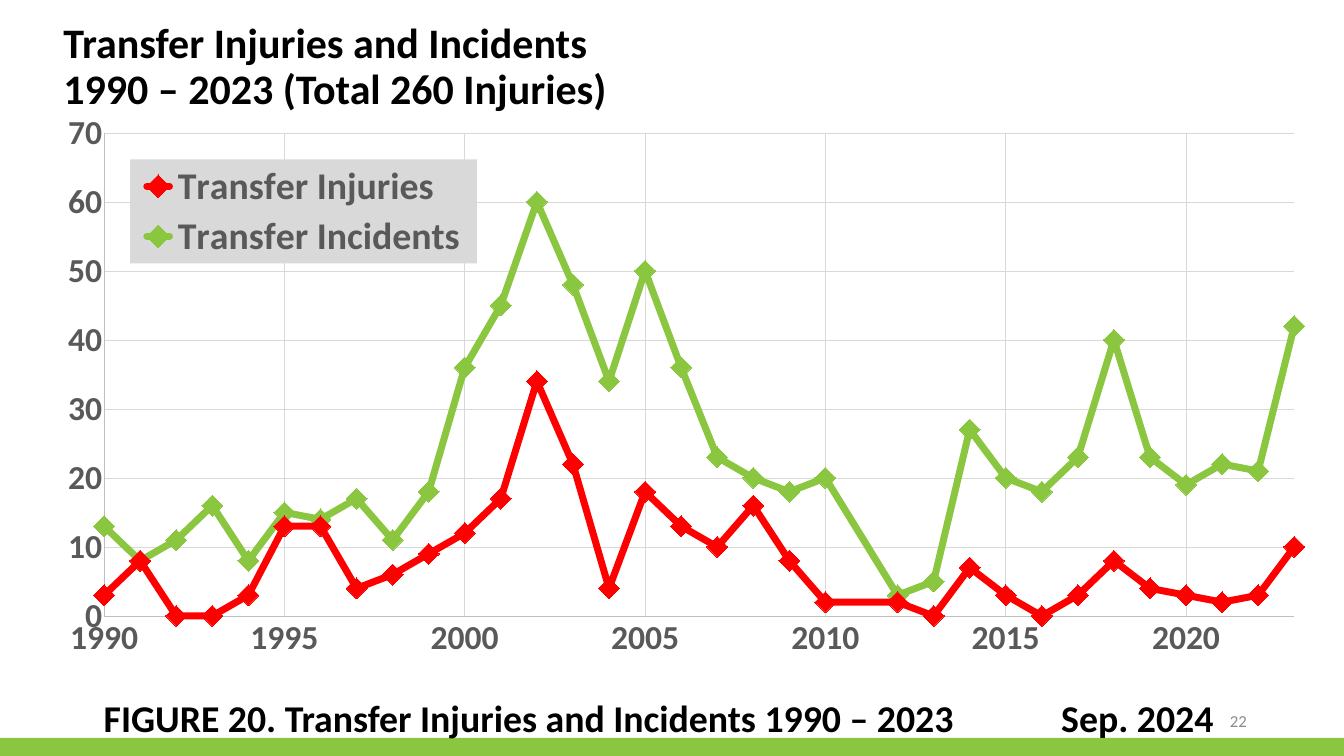
import pptx
import pptx.chart.data
import pptx.dml.color
import pptx.enum.chart
import pptx.enum.shapes
import pptx.enum.text
import pptx.oxml
import pptx.oxml.ns
import pptx.util

THEME = {
    "font": "Calibri",
    "ink": "000000", "axis_text": "595959", "axis_line": "BFBFBF", "grid": "D9D9D9",
    "legend_fill": "D9D9D9", "number": "8C8C8C", "injuries": "FF0000", "incidents": "8BC641",
    "title_size": 60, "caption_size": 54, "legend_size": 54, "axis_size": 48, "number_size": 24,
    "series_width": 10, "marker_size": 30, "hairline": 0.75,
}
WIDTH, HEIGHT = 26.67, 15
RGB = pptx.dml.color.RGBColor.from_string
Pt = pptx.util.Pt
NS = pptx.oxml.ns.nsdecls("c", "a")


def style(font, size, color, bold=True):
    font.name = THEME["font"]
    font.size = Pt(THEME[size])
    font.bold = bold
    font.color.rgb = RGB(THEME[color])


def layout_xml(x, y, w, h, target=""):
    modes = '<c:xMode val="edge"/><c:yMode val="edge"/>'
    return pptx.oxml.parse_xml(
        f'<c:layout {NS}><c:manualLayout>{target}{modes}<c:x val="{x}"/><c:y val="{y}"/>'
        f'<c:w val="{w}"/><c:h val="{h}"/></c:manualLayout></c:layout>')


deck = pptx.Presentation()
deck.slide_width = pptx.util.Inches(WIDTH)
deck.slide_height = pptx.util.Inches(HEIGHT)
slide = deck.slides.add_slide(deck.slide_layouts[6])
across, down = deck.slide_width, deck.slide_height

footer_band = slide.shapes.add_shape(
    pptx.enum.shapes.MSO_SHAPE.RECTANGLE, 0, int(down * 0.976), across, int(down * 0.024))
footer_band.shadow.inherit = False
footer_band.fill.solid()
footer_band.fill.fore_color.rgb = RGB(THEME["incidents"])
footer_band.line.fill.background()

ANCHOR, ALIGN = pptx.enum.text.MSO_ANCHOR, pptx.enum.text.PP_ALIGN
TEXTS = [
    ((18.84, 13.9, 6, 0.8), ["22"], "number_size", "number", False, ANCHOR.MIDDLE, ALIGN.RIGHT, 1),
    ((1.16, 0.4, 18.8, 1.39),
     ["Transfer Injuries and Incidents", "1990 – 2023 (Total 260 Injuries)"],
     "title_size", "ink", True, ANCHOR.TOP, ALIGN.LEFT, 0.9),
    ((1.96, 13.83, 22.29, 1.1),
     ["FIGURE 20. Transfer Injuries and Incidents 1990 – 2023\tSep. 2024"],
     "caption_size", "ink", True, ANCHOR.TOP, ALIGN.LEFT, 0.9),
]
for (x, y, w, h), lines, size, color, bold, anchor, align, spacing in TEXTS:
    frame = slide.shapes.add_textbox(
        int(across * x / WIDTH), int(down * y / HEIGHT),
        int(across * w / WIDTH), int(down * h / HEIGHT)).text_frame
    frame.word_wrap = True
    frame.vertical_anchor = anchor
    for number, line in enumerate(lines):
        paragraph = frame.add_paragraph() if number else frame.paragraphs[0]
        paragraph.alignment = align
        paragraph.line_spacing = spacing
        if "\t" in line:
            date_stop = pptx.util.Inches(19)
            paragraph._p.get_or_add_pPr().append(pptx.oxml.parse_xml(
                f'<a:tabLst {NS}><a:tab pos="{date_stop}" algn="l"/></a:tabLst>'))
        run = paragraph.add_run()
        run.text = line
        style(run.font, size, color, bold)

years = [year for year in range(1990, 2024) if year != 2011]
COUNTS = {
    "Transfer Injuries": [
        3, 8, 0, 0, 3, 13, 13, 4, 6, 9, 12, 17, 34, 22, 4, 18, 13, 10, 16, 8, 2,
        2, 0, 7, 3, 0, 3, 8, 4, 3, 2, 3, 10],
    "Transfer Incidents": [
        13, 8, 11, 16, 8, 15, 14, 17, 11, 18, 36, 45, 60, 48, 34, 50, 36, 23, 20, 18, 20,
        3, 5, 27, 20, 18, 23, 40, 23, 19, 22, 21, 42],
}
transfers = pptx.chart.data.XyChartData(number_format="General")
for name, counts in COUNTS.items():
    record = transfers.add_series(name)
    for year, count in zip(years, counts):
        record.add_data_point(year, count)

CHART = pptx.enum.chart
chart = slide.shapes.add_chart(
    CHART.XL_CHART_TYPE.XY_SCATTER_LINES,
    int(across * 1.35 / WIDTH), int(down * 2.23 / HEIGHT),
    int(across * 24.58 / WIDTH), int(down * 11.47 / HEIGHT), transfers).chart
chart.has_title = False
style(chart.font, "axis_size", "axis_text")
chart.plots[0].vary_by_categories = False

for series, color in zip(chart.plots[0].series, ("injuries", "incidents")):
    series.smooth = False
    series.format.line.width = Pt(THEME["series_width"])
    series.format.line.color.rgb = RGB(THEME[color])
    series.marker.style = CHART.XL_MARKER_STYLE.DIAMOND
    series.marker.size = THEME["marker_size"]
    series.marker.format.fill.solid()
    series.marker.format.fill.fore_color.rgb = RGB(THEME[color])
    series.marker.format.line.color.rgb = RGB(THEME[color])
for stroke in chart.element.xpath(".//c:ser/c:spPr/a:ln"):
    stroke.set("cap", "rnd")

for axis, low, high, step in ((chart.category_axis, 1990, 2023, 5), (chart.value_axis, 0, 70, 10)):
    axis.minimum_scale, axis.maximum_scale, axis.major_unit = low, high, step
    axis.major_tick_mark = axis.minor_tick_mark = CHART.XL_TICK_MARK.NONE
    axis.crosses = CHART.XL_AXIS_CROSSES.MINIMUM
    axis.has_major_gridlines = True
    axis.tick_labels.number_format = "General"
    axis.tick_labels.number_format_is_linked = False
    style(axis.tick_labels.font, "axis_size", "axis_text")
    for line, color in ((axis.format.line, "axis_line"), (axis.major_gridlines.format.line, "grid")):
        line.width = Pt(THEME["hairline"])
        line.color.rgb = RGB(THEME[color])

chart.has_legend = True
chart.legend.position = CHART.XL_LEGEND_POSITION.BOTTOM
chart.legend.include_in_layout = True
style(chart.legend.font, "legend_size", "axis_text")

for automatic in chart.element.xpath(".//c:plotArea/c:layout | .//c:legend/c:layout"):
    automatic.getparent().remove(automatic)
chart.element.xpath(".//c:plotArea")[0].insert(
    0, layout_xml(0.029, 0.034, 0.961, 0.837, '<c:layoutTarget val="inner"/>'))
chart.element.xpath(".//c:legend/c:legendPos")[0].addnext(layout_xml(0.05, 0.08, 0.28, 0.18))
chart.element.xpath(".//c:legend/c:txPr")[0].addprevious(pptx.oxml.parse_xml(
    f'<c:spPr {NS}><a:solidFill><a:srgbClr val="{THEME["legend_fill"]}"/></a:solidFill></c:spPr>'))

deck.save("out.pptx")
